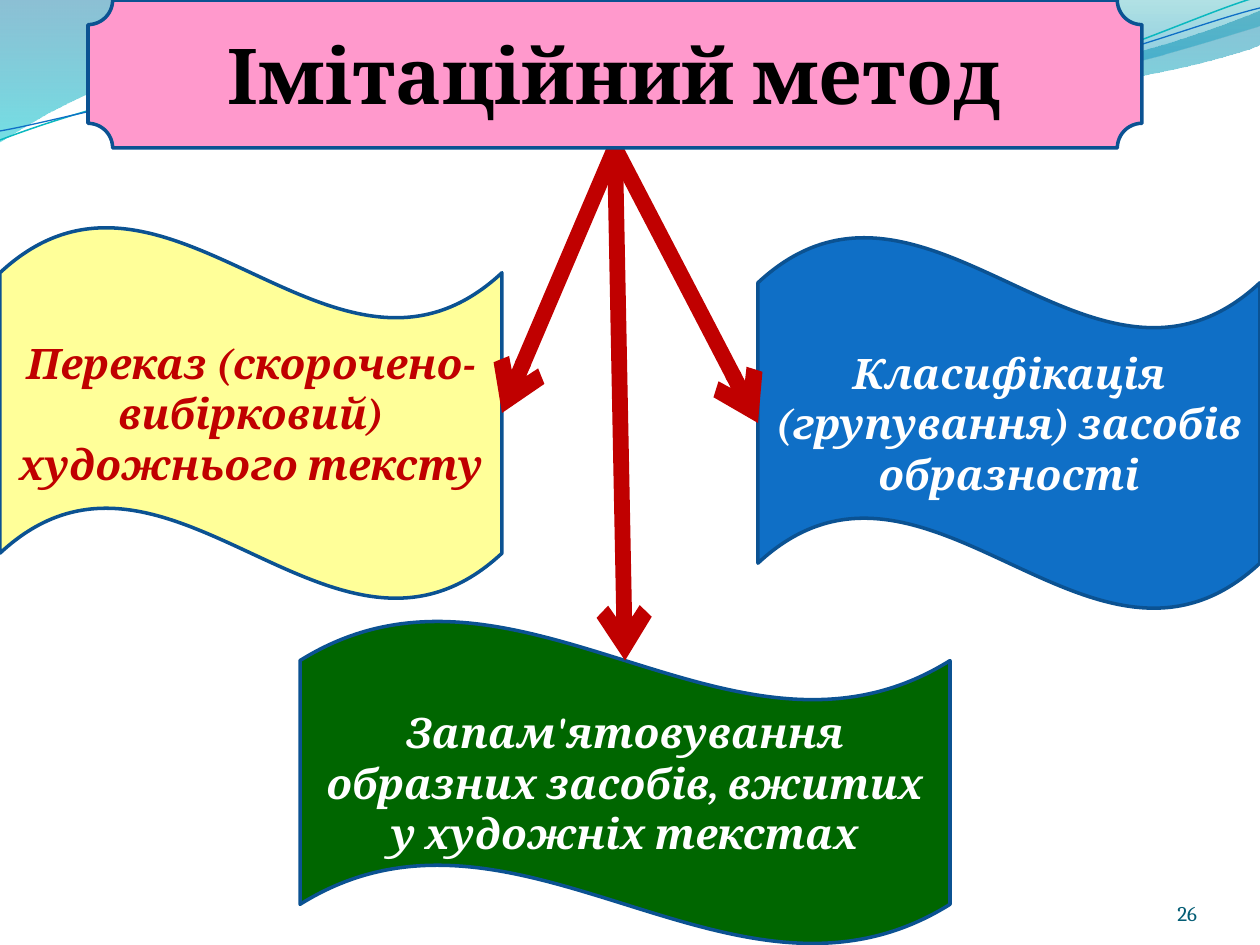
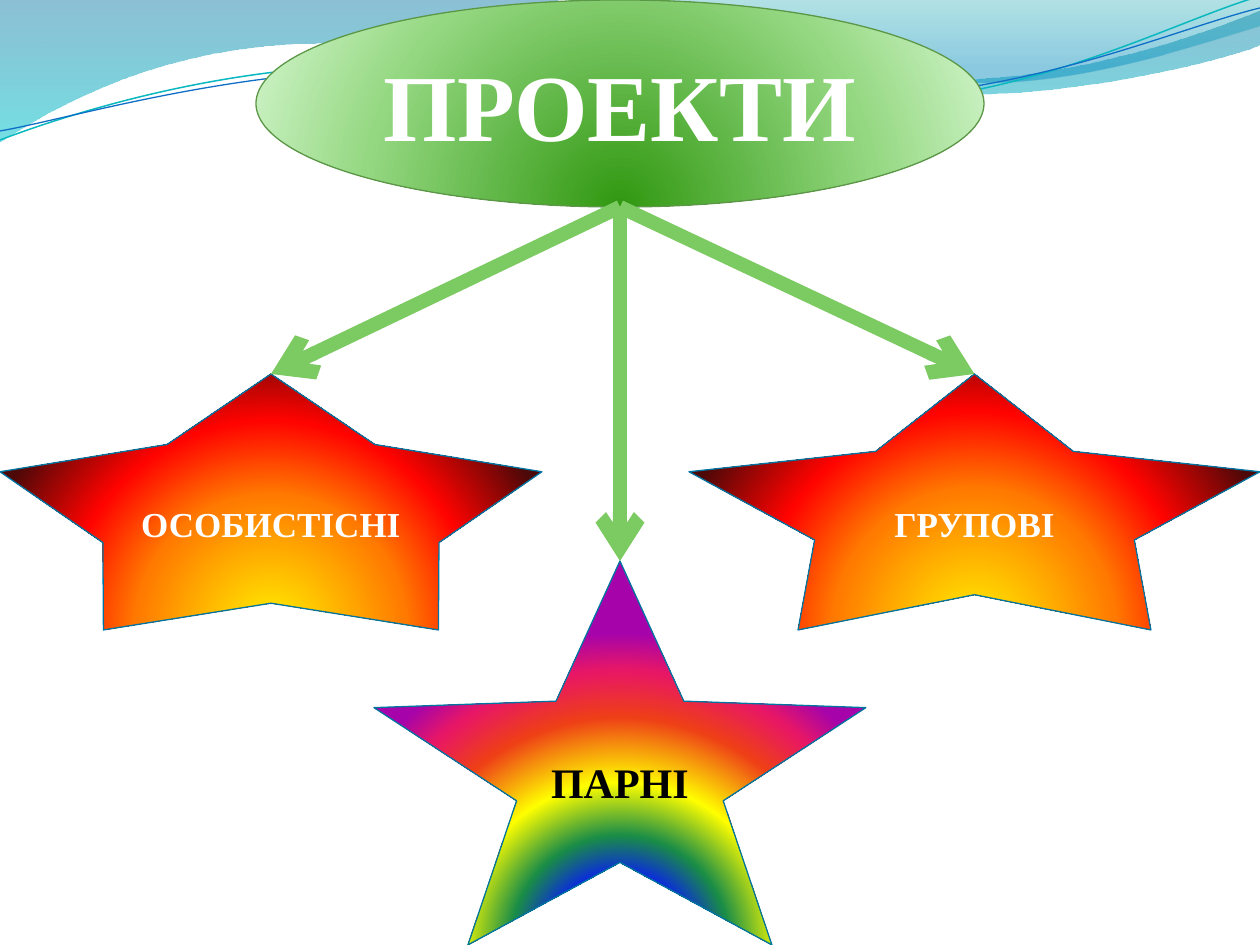
from dataclasses import dataclass

import pptx
import pptx.dml.color
import pptx.enum.shapes
import pptx.enum.text
import pptx.oxml
import pptx.oxml.ns
import pptx.util
from lxml import etree

SCALE = 914400 / 126
SLIDE_WIDTH, SLIDE_HEIGHT = 1260, 945
BLANK = 6
TOP, LEFT, BOTTOM, RIGHT = range(4)
Shapes = pptx.enum.shapes.MSO_SHAPE
Align = pptx.enum.text.PP_ALIGN
qn = pptx.oxml.ns.qn


@dataclass(frozen=True)
class Theme:
    serif: str = "Cambria"
    roman: str = "Times New Roman"
    white: str = "FFFFFF"
    black: str = "000000"
    red: str = "C00000"
    blue: str = "0F6FC6"
    navy: str = "0B5292"
    teal: str = "0AB8BF"
    ocean: str = "0074A1"
    number: str = "045D75"
    yellow: str = "FFFF99"
    dark_green: str = "006600"
    green: str = "7CCA62"
    moss: str = "5B9747"
    pink: str = "FF99CC"
    method_title: int = 44
    project_title: int = 54
    body: int = 24
    label: int = 20
    page_number: int = 12


THEME = Theme()

# Gradient stops: position, colour, opacity, all in percent
WIDE_BAND = [(0, THEME.ocean, 45), (100, "00C6CF", 55)]
CORNER_BAND = [(0, "00A1A9", 30), (80, "008BBF", 45)]
LEAF = [(0, "319811", 100), (68, "95D882", 100), (100, "C6EFBD", 100)]
FIRE = [(0, "FFF200", 100), (45, "FF7A00", 100), (70, "FF0300", 100),
        (100, "4D0808", 100)]
RAINBOW = [(0, "A603AB", 100), (21, "0819FB", 100), (35, "1A8D48", 100),
           (52, "FFFF00", 100), (73, "EE3F17", 100), (88, "E81766", 100),
           (100, "A603AB", 100)]
VERTICAL = '<a:lin ang="5400000" scaled="1"/>'
FROM_BELOW = ('<a:path path="circle"><a:fillToRect l="50000" t="130000" '
              'r="50000" b="-30000"/></a:path>')

# Outlines: a start point, then line ends (2 numbers) or Bezier curves (6)
WIDE_OUTLINE = [(0, -1), (554, -1), (600, 21, 837, 79, 955, 79),
                (1074, 79, 1207, 33, 1260, 11), (1261, 45),
                (1238, 55, 1096, 96, 940, 95), (784, 95, 481, 35, 324, 43),
                (163, 44, 58, 105, -1, 142), (0, -1)]
CORNER_OUTLINE = [(604, -1), (641, 14, 859, 78, 969, 82),
                  (1079, 87, 1211, 40, 1260, 26), (1260, 0), (604, -1)]
TEAL_WAVE = [(0, 140), (60, 117, 199, 72, 349, 66),
             (498, 59, 747, 112, 898, 101), (1050, 89, 1182, 19, 1257, -3)]
BLUE_WAVE = [(0, 131), (59, 121, 207, 77, 357, 71),
             (508, 64, 752, 105, 903, 95), (1053, 84, 1186, 26, 1260, 8)]


def px(length):
    return pptx.util.Emu(round(length * SCALE))


def rgb(colour):
    return pptx.dml.color.RGBColor.from_string(colour)


def set_line(line, colour, width):
    line.color.rgb = rgb(colour)
    line.width = pptx.util.Pt(width)


def set_solid(shape, colour):
    shape.fill.solid()
    shape.fill.fore_color.rgb = rgb(colour)


def set_gradient(shape, stops, direction):
    marks = "".join(
        f'<a:gs pos="{position * 1000}"><a:srgbClr val="{colour}">'
        f'<a:alpha val="{opacity * 1000}"/></a:srgbClr></a:gs>'
        for position, colour, opacity in stops)
    gradient = pptx.oxml.parse_xml(
        f'<a:gradFill {pptx.oxml.ns.nsdecls("a")} rotWithShape="1">'
        f'<a:gsLst>{marks}</a:gsLst>{direction}</a:gradFill>')
    shape.fill.solid()
    properties = shape.element.spPr
    properties.replace(properties.find(qn("a:solidFill")), gradient)


def add_outline(page, outline, close):
    """Draw the outline by its end points, then bend the curved segments."""
    ends = [step[-2:] for step in outline]
    builder = page.shapes.build_freeform(*ends[0], scale=SCALE)
    builder.add_line_segments(ends[1:], close=close)
    shape = builder.convert_to_shape()
    shape.shadow.inherit = False
    left, top = (min(values) for values in zip(*ends))
    segments = list(shape.element.spPr.iter(qn("a:lnTo")))
    for segment, step in zip(segments, outline[1:]):
        if len(step) == 6:
            curve = etree.Element(qn("a:cubicBezTo"))
            for x, y in zip(step[::2], step[1::2]):
                etree.SubElement(curve, qn("a:pt"), x=str(x - left), y=str(y - top))
            segment.getparent().replace(segment, curve)
    return shape


def add_band(page, outline, stops):
    band = add_outline(page, outline, close=True)
    set_gradient(band, stops, VERTICAL)
    band.line.fill.background()
    return band


def add_wave_line(page, outline, colour, width):
    wave_line = add_outline(page, outline, close=False)
    wave_line.fill.background()
    set_line(wave_line.line, colour, width)
    return wave_line


def decorate_master(deck, page):
    """Build the top waves on a page, then move them to the slide master."""
    waves = [add_band(page, WIDE_OUTLINE, WIDE_BAND),
             add_band(page, CORNER_OUTLINE, CORNER_BAND),
             add_wave_line(page, TEAL_WAVE, THEME.teal, 0.85),
             add_wave_line(page, BLUE_WAVE, THEME.blue, 0.75)]
    for number, wave in enumerate(waves, start=101):
        wave.element.nvSpPr.cNvPr.set("id", str(number))
        deck.slide_master.shapes.element.append(wave.element)


def write(shape, text, font, size, colour, italic=False, bold=True, align=Align.CENTER):
    para = shape.text_frame.paragraphs[0]
    para.text = text
    para.alignment = align
    para.font.name = font
    para.font.size = pptx.util.Pt(size)
    para.font.bold = bold
    para.font.italic = italic
    para.font.color.rgb = rgb(colour)


def add_preset(page, preset, box, line_colour, line_width):
    shape = page.shapes.add_shape(preset, *map(px, box))
    shape.shadow.inherit = False
    set_line(shape.line, line_colour, line_width)
    return shape


def add_flag(page, box, fill, text, colour):
    flag = add_preset(page, Shapes.WAVE, box, THEME.navy, 2)
    set_solid(flag, fill)
    write(flag, text, THEME.serif, THEME.body, colour, italic=True)
    return flag


def add_star(page, box, depth, stops, text, size, colour):
    star = add_preset(page, Shapes.STAR_5_POINT, box, THEME.ocean, 0.75)
    star.adjustments[0] = depth
    set_gradient(star, stops, FROM_BELOW)
    write(star, text, THEME.roman, size, colour)
    return star


def add_arrow(page, start, end, colour, width):
    arrow = page.shapes.add_connector(
        pptx.enum.shapes.MSO_CONNECTOR.STRAIGHT, *start, *end)
    set_line(arrow.line, colour, width)
    properties = arrow.element.spPr
    etree.SubElement(properties.find(qn("a:ln")), qn("a:tailEnd"), type="arrow")
    etree.SubElement(properties, qn("a:effectLst"))
    return arrow


def top_middle(shape):
    return shape.left + shape.width // 2, shape.top


def bottom_middle(shape):
    return shape.left + shape.width // 2, shape.top + shape.height


def add_page_number(page, text):
    box = page.shapes.add_textbox(*map(px, (1092, 876, 105, 50)))
    frame = box.text_frame
    frame.word_wrap = True
    frame.vertical_anchor = pptx.enum.text.MSO_ANCHOR.BOTTOM
    frame.margin_left = frame.margin_right = 0
    frame.margin_top = frame.margin_bottom = 0
    write(box, text, THEME.serif, THEME.page_number, THEME.number,
          bold=False, align=Align.RIGHT)


def build_method_page(page):
    add_page_number(page, "26")
    grouping = add_flag(page, (758, 236, 502, 374), THEME.blue,
                        "Класифікація (групування) засобів образності", THEME.white)
    retelling = add_flag(page, (0, 226, 502, 374), THEME.yellow,
                         "Переказ (скорочено-вибірковий) художнього тексту",
                         THEME.red)
    memorising = add_flag(page, (300, 620, 650, 325), THEME.dark_green,
                          "Запам'ятовування образних засобів, вжитих у художніх текстах",
                          THEME.white)
    plaque = add_preset(page, Shapes.PLAQUE, (88, 0, 1054, 148), THEME.navy, 2)
    set_solid(plaque, THEME.pink)
    write(plaque, "Імітаційний метод", THEME.serif, THEME.method_title, THEME.black)

    crest_x, crest_y = top_middle(memorising)
    crest = crest_x, crest_y + memorising.height // 8
    for flag, side in ((retelling, RIGHT), (grouping, LEFT), (memorising, None)):
        arrow = add_arrow(page, bottom_middle(plaque), crest, THEME.red, 9)
        arrow.begin_connect(plaque, BOTTOM)
        if side is not None:
            arrow.end_connect(flag, side)
    page.shapes.element.append(plaque.element)


def build_projects_page(page):
    ellipse = add_preset(page, Shapes.OVAL, (256, 0, 728, 207), THEME.moss, 0.75)
    set_gradient(ellipse, LEAF, FROM_BELOW)
    write(ellipse, "ПРОЕКТИ", THEME.roman, THEME.project_title, THEME.white)
    stars = [
        add_star(page, (0, 374, 542, 256), 0.31, FIRE, "ОСОБИСТІСНІ",
                 THEME.label, THEME.white),
        add_star(page, (374, 561, 492, 384), 0.21, RAINBOW, "ПАРНІ",
                 THEME.body, THEME.black),
        add_star(page, (689, 374, 571, 256), 0.28, FIRE, "ГРУПОВІ",
                 THEME.label, THEME.white),
    ]
    for star in stars:
        add_arrow(page, bottom_middle(ellipse), top_middle(star), THEME.green, 8)


def main():
    deck = pptx.Presentation()
    deck.slide_width, deck.slide_height = px(SLIDE_WIDTH), px(SLIDE_HEIGHT)
    layout = deck.slide_layouts[BLANK]
    method_page, projects_page = (deck.slides.add_slide(layout) for _ in range(2))
    decorate_master(deck, method_page)
    build_method_page(method_page)
    build_projects_page(projects_page)
    deck.save("out.pptx")


if __name__ == "__main__":
    main()
